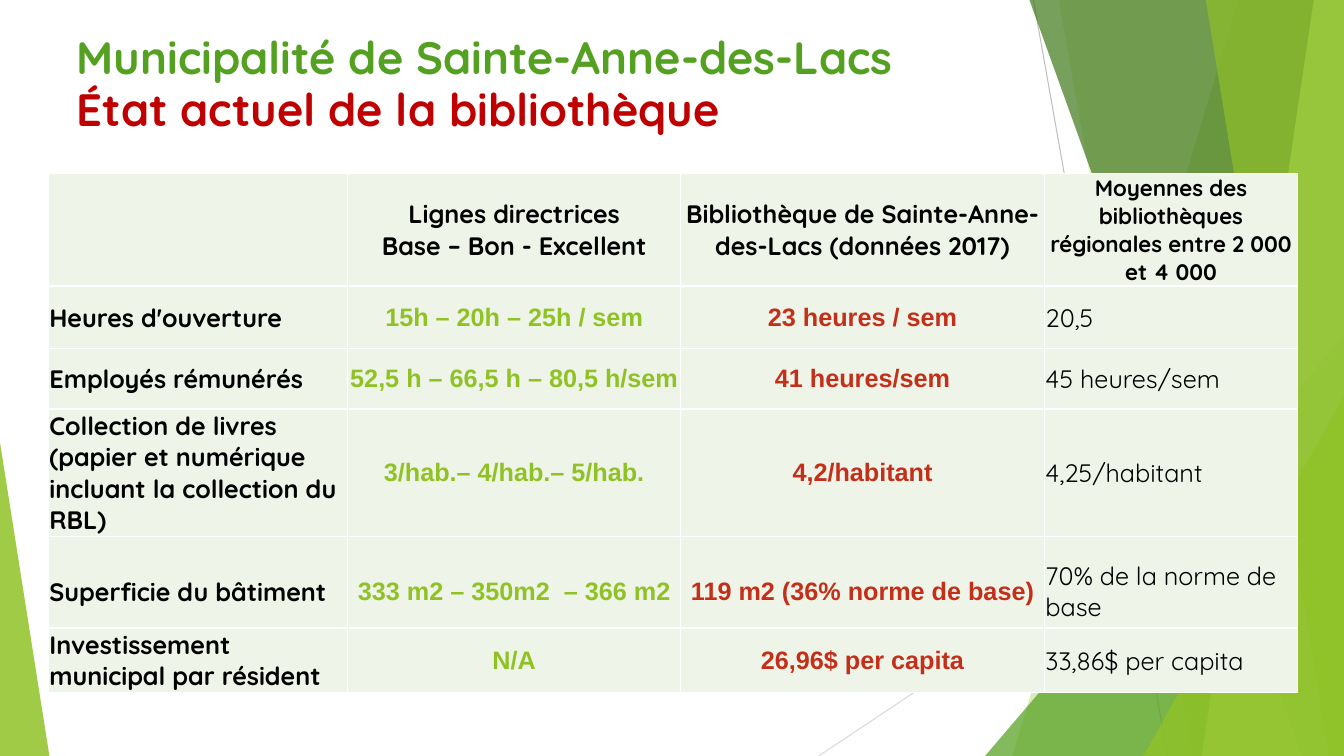
from typing import NamedTuple

from lxml.etree import SubElement
from pptx import Presentation
from pptx.dml.color import RGBColor
from pptx.enum.shapes import MSO_CONNECTOR, MSO_SHAPE
from pptx.enum.text import MSO_ANCHOR, MSO_AUTO_SIZE, PP_ALIGN
from pptx.oxml import parse_xml
from pptx.oxml.ns import nsdecls, qn
from pptx.util import Inches, Pt

WIDTH, HEIGHT = 13.33, 7.5
COLORS = {
    "lime": "90C226",
    "green": "54A021",
    "forest": "3F7819",
    "pale lime": "C0E474",
    "cell": "EEF4E8",
    "white": "FFFFFF",
    "black": "000000",
    "red": "C42F1A",
    "dark red": "C00000",
    "gray": "BFBFBF",
    "light gray": "D9D9D9",
}


class Ray(NamedTuple):
    start: tuple[float, float]
    end: tuple[float, float]
    color: str


class Band(NamedTuple):
    """Area between a slanted left edge and the right side of the slide."""
    top_x: float
    bottom_x: float
    color: str
    opacity: int


class Corner(NamedTuple):
    """Triangle standing on the bottom of the slide."""
    left: float
    top: float
    width: float
    apex: float
    color: str
    opacity: int


class ColumnStyle(NamedTuple):
    width: float
    font: str
    color: str
    bold: bool
    alignment: PP_ALIGN


DECORATION = [
    Ray((10.25, 0), (11.58, HEIGHT), "gray"),
    Ray((WIDTH, 4.03), (8.12, HEIGHT), "light gray"),
    Band(12.28, 10.04, "lime", 30),
    Band(10.5, 11.83, "lime", 20),
    Corner(9.77, 3.33, 3.56, 1, "green", 72),
    Band(10.21, 12.91, "forest", 70),
    Band(13.03, 11.92, "pale lime", 70),
    Band(11.96, 13.18, "lime", 65),
    Corner(11.34, 3.93, 1.99, 1, "lime", 80),
    Corner(0, 4.39, 0.49, 0, "lime", 85),
]
COLUMNS = [
    ColumnStyle(2.97, "Quicksand", "black", True, PP_ALIGN.LEFT),
    ColumnStyle(3.3, "Arial", "lime", True, PP_ALIGN.CENTER),
    ColumnStyle(3.61, "Arial", "red", True, PP_ALIGN.CENTER),
    ColumnStyle(2.51, "Quicksand", "black", False, PP_ALIGN.LEFT),
]
HEADERS = [
    "",
    "Lignes directrices\nBase – Bon - Excellent",
    "Bibliothèque de Sainte-Anne-des-Lacs (données 2017)",
    "Moyennes des bibliothèques régionales entre 2 000 et 4 000",
]
SERVICES = [
    ["Heures d'ouverture", "15h – 20h – 25h / sem", "23 heures / sem", "20,5"],
    ["Employés rémunérés", "52,5 h – 66,5 h – 80,5 h/sem", "41 heures/sem", "45 heures/sem"],
    ["Collection de livres (papier et numérique incluant la collection du RBL)",
     "3/hab.– 4/hab.– 5/hab.", "4,2/habitant", "4,25/habitant"],
    ["Superficie du bâtiment", "333 m2 – 350m2  – 366 m2",
     "119 m2 (36% norme de base)", "70% de la norme de base"],
]
INVESTMENT = ["Investissement municipal par résident", "N/A",
              "26,96$ per capita", "33,86$ per capita"]


def rgb(name: str) -> RGBColor:
    return RGBColor.from_string(COLORS[name])


def style_font(font, name: str, size: float, color: str, bold: bool) -> None:
    font.name, font.size, font.bold = name, Pt(size), bold
    font.color.rgb = rgb(color)


def paint(shape, color: str, opacity: int) -> None:
    shape.shadow.inherit = False
    shape.line.fill.background()
    shape.fill.solid()
    shape.fill.fore_color.rgb = rgb(color)
    color_element = shape.fill._xPr.find(qn("a:solidFill"))[0]
    SubElement(color_element, qn("a:alpha"), val=str(opacity * 1000))


def draw_ray(slide, ray: Ray) -> None:
    connector = slide.shapes.add_connector(
        MSO_CONNECTOR.STRAIGHT, *map(Inches, ray.start + ray.end))
    connector.line.width = Pt(0.75)
    connector.line.color.rgb = rgb(ray.color)
    SubElement(connector._element.spPr, qn("a:effectLst"))


def draw_band(slide, band: Band) -> None:
    outline = [(band.top_x, 0), (WIDTH, 0), (WIDTH, HEIGHT), (band.bottom_x, HEIGHT)]
    points = [(Inches(x), Inches(y)) for x, y in outline]
    builder = slide.shapes.build_freeform(*points[0])
    builder.add_line_segments(points[1:], close=True)
    paint(builder.convert_to_shape(), band.color, band.opacity)


def draw_corner(slide, corner: Corner) -> None:
    shape = slide.shapes.add_shape(
        MSO_SHAPE.ISOSCELES_TRIANGLE, Inches(corner.left), Inches(corner.top),
        Inches(corner.width), Inches(HEIGHT - corner.top))
    shape.adjustments[0] = corner.apex
    paint(shape, corner.color, corner.opacity)


def fill_cell(cell, text: str, style: ColumnStyle, size: float) -> None:
    cell.margin_left = cell.margin_right = cell.margin_top = Inches(0.01)
    cell.margin_bottom = 0
    cell.vertical_anchor = MSO_ANCHOR.MIDDLE
    cell.fill.solid()
    cell.fill.fore_color.rgb = rgb("cell")
    cell.text_frame.text = text
    for paragraph in cell.text_frame.paragraphs:
        paragraph.alignment = style.alignment
        for run in paragraph.runs:
            style_font(run.font, style.font, size, style.color, style.bold)
    # Borders come before the fill in the cell properties
    properties = cell._tc.get_or_add_tcPr()
    for position, side in enumerate("LRTB"):
        properties.insert(position, parse_xml(
            f'<a:ln{side} {nsdecls("a")} w="12700"><a:solidFill>'
            f'<a:srgbClr val="{COLORS["white"]}"/></a:solidFill></a:ln{side}>'))


def draw_table(slide, top: float, heights: list[float], rows: list[list[str]]) -> None:
    table = slide.shapes.add_table(
        len(rows), len(COLUMNS), Inches(0.48), Inches(top),
        Inches(sum(style.width for style in COLUMNS)), Inches(sum(heights))).table
    table.first_row = table.horz_banding = False
    for column, style in zip(table.columns, COLUMNS):
        column.width = Inches(style.width)
    for row, height, texts in zip(table.rows, heights, rows):
        row.height = Inches(height)
        for index, (cell, text, style) in enumerate(zip(row.cells, texts, COLUMNS)):
            size = 18
            if texts is HEADERS:
                style = style._replace(font="Quicksand", color="black", bold=True,
                                       alignment=PP_ALIGN.CENTER)
                size = 16 if index == len(COLUMNS) - 1 else 18
            fill_cell(cell, text, style, size)


def write_title(slide) -> None:
    title = slide.shapes.title
    title.left, title.top = Inches(0.66), Inches(0.28)
    title.width, title.height = Inches(9.4), Inches(1.44)
    frame = title.text_frame
    frame.text = "Municipalité de Sainte-Anne-des-Lacs\vÉtat actuel de la bibliothèque"
    frame.word_wrap = True
    frame.auto_size = MSO_AUTO_SIZE.NONE
    frame.vertical_anchor = MSO_ANCHOR.TOP
    paragraph = frame.paragraphs[0]
    paragraph.alignment = PP_ALIGN.LEFT
    paragraph.line_spacing = 0.95
    for run, color in zip(paragraph.runs, ("green", "dark red")):
        style_font(run.font, "Quicksand", 32.4, color, True)


def main() -> None:
    presentation = Presentation()
    presentation.slide_width, presentation.slide_height = Inches(WIDTH), Inches(HEIGHT)
    slide = presentation.slides.add_slide(presentation.slide_layouts[5])

    # Green facets around the slide
    painters = {Ray: draw_ray, Band: draw_band, Corner: draw_corner}
    for part in DECORATION:
        painters[type(part)](slide, part)

    # Title and comparison tables
    write_title(slide)
    draw_table(slide, 1.72, [0.84, 0.62, 0.6, 0.73, 1.09], [HEADERS, *SERVICES])
    draw_table(slide, 6.23, [0.61], [INVESTMENT])
    presentation.save("out.pptx")


if __name__ == "__main__":
    main()
